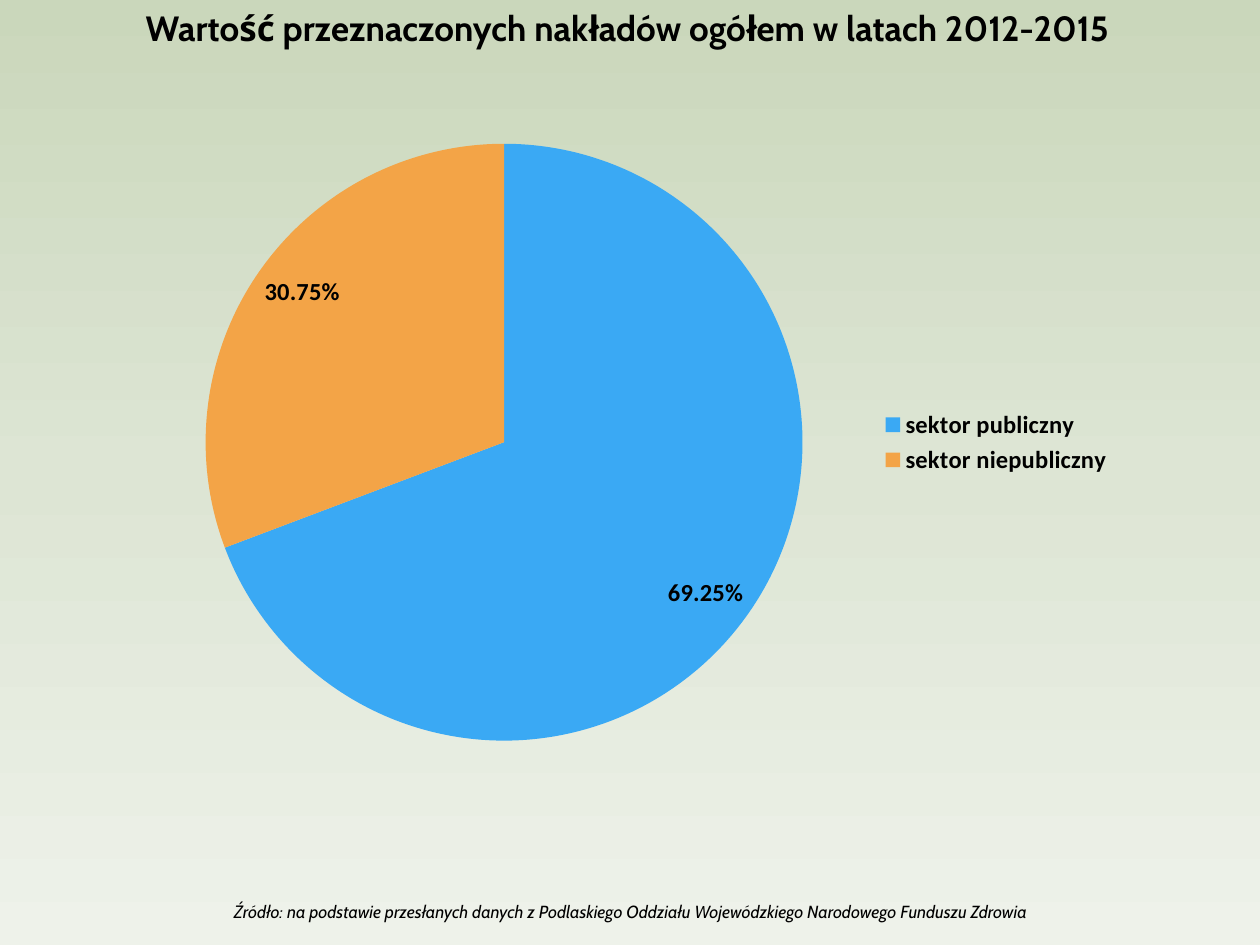
"""Build a slide with a pie chart of public and non-public sector spending."""
import copy

import pptx
import pptx.chart.data
import pptx.dml.color
import pptx.enum.chart
import pptx.enum.text
import pptx.oxml
import pptx.oxml.ns
import pptx.util

TITLE = "Wartość przeznaczonych nakładów ogółem w latach 2012-2015"
SOURCE = (
    "Źródło: na podstawie przesłanych danych z Podlaskiego Oddziału "
    "Wojewódzkiego Narodowego Funduszu Zdrowia"
)
SECTORS = [("sektor publiczny", 0.6925), ("sektor niepubliczny", 0.3075)]

THEME = {
    "text": "000000",
    "slices": ["3AA9F4", "F3A447"],
    "background": ["CAD7BB", "DDE5D4", "EEF2EA"],
    "text_font": "Cabin",
    "chart_font": "Calibri",
    "title_size": 20,
    "chart_size": 14,
    "source_size": 10,
}
TITLE_AREA = (0.28, 0, 9.4, 0.44)
CHART_AREA = (0.98, 0.99, 7.95, 5.04)
SOURCE_AREA = (1.3, 7.1, 7.4, 0.27)
PIE_LAYOUT = {"x": 0.08, "y": 0.03, "w": 0.6, "h": 0.94}


def rgb(value):
    return pptx.dml.color.RGBColor.from_string(value)


def inches(area):
    return [pptx.util.Inches(length) for length in area]


def format_font(font, name, size, bold=False, italic=False):
    font.name = name
    font.size = pptx.util.Pt(size)
    font.bold = bold
    font.italic = italic
    font.color.rgb = rgb(THEME["text"])


def write_text(box, text, area, **style):
    box.left, box.top, box.width, box.height = inches(area)
    frame = box.text_frame
    frame.word_wrap = True
    frame.auto_size = pptx.enum.text.MSO_AUTO_SIZE.SHAPE_TO_FIT_TEXT
    frame.vertical_anchor = pptx.enum.text.MSO_ANCHOR.TOP
    para = frame.paragraphs[0]
    para.alignment = pptx.enum.text.PP_ALIGN.CENTER
    span = para.add_run()
    span.text = text
    format_font(span.font, THEME["text_font"], **style)


def paint_background(page):
    fill = page.background.fill
    fill.gradient()
    fill.gradient_angle = 270
    stop_list = page.element.find(".//" + pptx.oxml.ns.qn("a:gsLst"))
    stop_list.insert(1, copy.deepcopy(stop_list[0]))
    colors = THEME["background"]
    for index, (stop, color) in enumerate(zip(fill.gradient_stops, colors)):
        stop.position = index / (len(colors) - 1)
        stop.color.rgb = rgb(color)


def place_pie(chart):
    values = "".join(
        f'<c:{key} val="{value}"/>' for key, value in PIE_LAYOUT.items()
    )
    layout = pptx.oxml.parse_xml(
        f'<c:layout {pptx.oxml.ns.nsdecls("c")}><c:manualLayout>'
        '<c:layoutTarget val="inner"/>'
        '<c:xMode val="edge"/><c:yMode val="edge"/>'
        f"{values}</c:manualLayout></c:layout>"
    )
    plot_area = chart.element.find(".//" + pptx.oxml.ns.qn("c:plotArea"))
    for previous in plot_area.findall(pptx.oxml.ns.qn("c:layout")):
        plot_area.remove(previous)
    plot_area.insert(0, layout)


def add_sector_chart(page):
    data = pptx.chart.data.CategoryChartData(number_format="0.00%")
    data.categories = [name for name, share in SECTORS]
    data.add_series("Series 1", [share for name, share in SECTORS])
    chart = page.shapes.add_chart(
        pptx.enum.chart.XL_CHART_TYPE.PIE, *inches(CHART_AREA), data
    ).chart
    format_font(chart.font, THEME["chart_font"], THEME["chart_size"], bold=True)
    chart.has_title = False
    chart.has_legend = True
    chart.legend.position = pptx.enum.chart.XL_LEGEND_POSITION.RIGHT
    chart.legend.include_in_layout = False

    plot = chart.plots[0]
    plot.vary_by_categories = True
    for index, color in enumerate(THEME["slices"]):
        fill = plot.series[0].points[index].format.fill
        fill.solid()
        fill.fore_color.rgb = rgb(color)
    plot.has_data_labels = True
    labels = plot.data_labels
    labels.show_value = True
    labels.show_percentage = False
    labels.number_format = "0.00%"
    labels.number_format_is_linked = False
    labels.position = pptx.enum.chart.XL_LABEL_POSITION.INSIDE_END
    place_pie(chart)


def main():
    deck = pptx.Presentation()
    deck.slide_width, deck.slide_height = inches((10, 7.5))
    page = deck.slides.add_slide(deck.slide_layouts[5])
    paint_background(page)
    write_text(page.shapes.title, TITLE, TITLE_AREA, size=THEME["title_size"], bold=True)
    add_sector_chart(page)
    source_box = page.shapes.add_textbox(*inches(SOURCE_AREA))
    write_text(source_box, SOURCE, SOURCE_AREA, size=THEME["source_size"], italic=True)
    deck.save("out.pptx")


if __name__ == "__main__":
    main()
